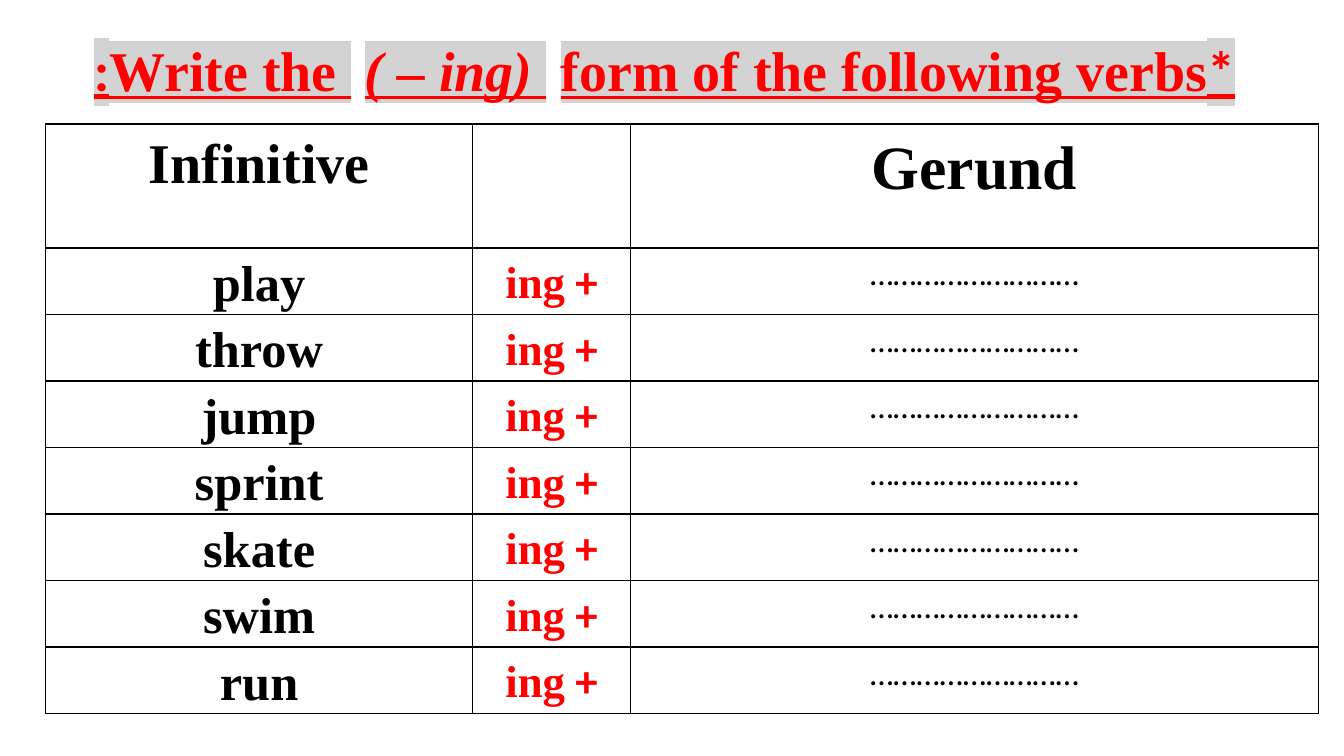
from dataclasses import dataclass
from typing import Optional

from lxml.etree import SubElement
from pptx import Presentation
from pptx.dml.color import RGBColor
from pptx.enum.text import MSO_AUTO_SIZE, PP_ALIGN
from pptx.oxml.ns import qn
from pptx.util import Emu, Pt

EMU_PER_PX = 9144


@dataclass(frozen=True)
class Theme:
    font: str = "Times New Roman"
    neutral_font: str = "+mn-lt"  # symbols inside right-to-left text
    ink: str = "000000"
    accent: str = "FF0000"
    highlight: str = "D3D3D3"
    title_size: int = 40
    gerund_size: int = 44
    verb_size: int = 36
    ending_size: int = 32
    blank_size: int = 24


THEME = Theme()


@dataclass(frozen=True)
class TextRun:
    text: str
    size: int
    color: str = THEME.ink
    bold: bool = True
    italic: bool = False
    underline: bool = False
    highlight: Optional[str] = None
    spacing: int = 0


def px(length: int) -> Emu:
    return Emu(length * EMU_PER_PX)


def write_paragraph(paragraph, text_runs: list[TextRun]) -> None:
    paragraph.alignment = PP_ALIGN.CENTER
    paragraph.line_spacing = 1.15
    paragraph._p.get_or_add_pPr().set("rtl", "1")
    for text_run in text_runs:
        run = paragraph.add_run()
        run.text = text_run.text
        format_values = {
            "name": THEME.font,
            "size": Pt(text_run.size),
            "bold": text_run.bold,
            "italic": text_run.italic,
            "underline": text_run.underline,
        }
        for attribute, value in format_values.items():
            setattr(run.font, attribute, value)
        run.font.color.rgb = RGBColor.from_string(text_run.color)
        properties = run._r.get_or_add_rPr()
        if text_run.spacing:
            properties.set("spc", str(text_run.spacing * 100))
        if text_run.highlight:
            highlight = SubElement(properties, qn("a:highlight"))
            SubElement(highlight, qn("a:srgbClr"), val=text_run.highlight)
            properties.find(qn("a:solidFill")).addnext(highlight)
        SubElement(properties, qn("a:cs"), typeface=THEME.neutral_font)


def format_cell(cell) -> None:
    properties = cell._tc.get_or_add_tcPr()
    for side in ("lnL", "lnR", "lnT", "lnB"):
        line = SubElement(properties, qn(f"a:{side}"), w=str(Pt(1)))
        fill = SubElement(line, qn("a:solidFill"))
        SubElement(fill, qn("a:srgbClr"), val=THEME.ink)
    cell.fill.background()
    margins = {"margin_left": 7, "margin_right": 7, "margin_top": 0, "margin_bottom": 0}
    for attribute, length in margins.items():
        setattr(cell, attribute, px(length))


def title_run(text: str, italic: bool = False, spacing: int = 0) -> TextRun:
    return TextRun(text, THEME.title_size, THEME.accent, italic=italic, underline=True,
                   highlight=THEME.highlight, spacing=spacing)


def add_title(slide) -> None:
    text_box = slide.shapes.add_textbox(px(45), px(20), px(1228), px(83))
    frame = text_box.text_frame
    frame.word_wrap = True
    frame.auto_size = MSO_AUTO_SIZE.SHAPE_TO_FIT_TEXT
    paragraph = frame.paragraphs[0]
    write_paragraph(paragraph, [
        title_run("*Write the"),
        title_run(" ", spacing=10),
        title_run("( – ing)", italic=True),
        title_run(" ", italic=True, spacing=10),
        title_run("form of the following verbs:"),
    ])
    paragraph.space_after = Pt(10)


def add_verb_table(slide, verbs: list[str]) -> None:
    column_widths = [424, 156, 683]
    row_heights = [123] + [66] * len(verbs)
    table = slide.shapes.add_table(
        len(row_heights), len(column_widths), px(45), px(123),
        px(sum(column_widths)), px(sum(row_heights))).table
    table.first_row = False
    table.horz_banding = False
    for column, width in zip(table.columns, column_widths):
        column.width = px(width)
    for row, height in zip(table.rows, row_heights):
        row.height = px(height)

    header = [TextRun("Infinitive", THEME.title_size), None,
              TextRun("Gerund", THEME.gerund_size)]
    exercises = [
        [TextRun(verb, THEME.verb_size),
         TextRun("+ ing", THEME.ending_size, THEME.accent),
         TextRun("…" * 9, THEME.blank_size, bold=False)]
        for verb in verbs
    ]
    for row, entries in zip(table.rows, [header] + exercises):
        for cell, entry in zip(row.cells, entries):
            format_cell(cell)
            if entry:
                write_paragraph(cell.text_frame.paragraphs[0], [entry])


def main() -> None:
    presentation = Presentation()
    presentation.slide_width = px(1333)
    presentation.slide_height = px(750)
    slide = presentation.slides.add_slide(presentation.slide_layouts[6])

    # Verb table
    add_verb_table(slide, ["play", "throw", "jump", "sprint", "skate", "swim", "run"])

    # Heading
    add_title(slide)

    presentation.save("out.pptx")


if __name__ == "__main__":
    main()
